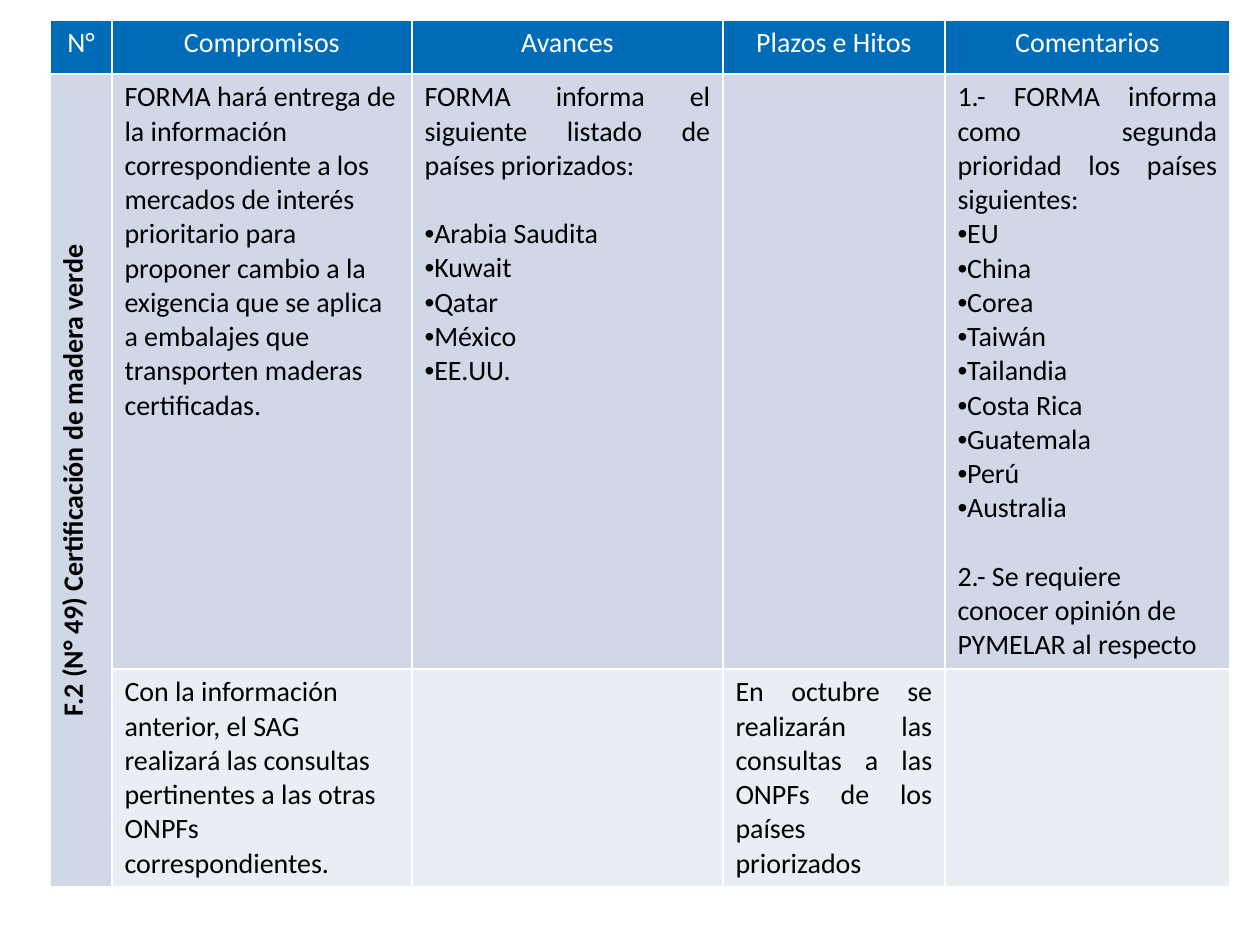
from lxml import etree
from pptx import Presentation
from pptx import util as u
from pptx.dml.color import RGBColor
from pptx.enum import text
from pptx.oxml import ns

WHITE = RGBColor(0xFF, 0xFF, 0xFF)
BLACK = RGBColor(0x00, 0x00, 0x00)
HEADER_BLUE = RGBColor(0x00, 0x6C, 0xB7)
BAND_DARK = RGBColor(0xD0, 0xD8, 0xE8)
BAND_LIGHT = RGBColor(0xE9, 0xED, 0xF4)

LEFT = text.PP_ALIGN.LEFT
CENTER = text.PP_ALIGN.CENTER
JUSTIFY = text.PP_ALIGN.JUSTIFY


def px(length):
    return u.Emu(round(length * 914400 / 126))


class SlideBuilder:
    font = "Calibri"
    size = u.Pt(16)
    line_gap = u.Pt(19.5)

    def __init__(self, slide):
        self.slide = slide

    def table(self, left, top, widths, heights, fills):
        frame = self.slide.shapes.add_table(
            len(heights), len(widths), px(left), px(top),
            px(sum(widths)), px(sum(heights)))
        grid = frame.table
        for column, width in zip(grid.columns, widths):
            column.width = px(width)
        for row, height, fill in zip(grid.rows, heights, fills):
            row.height = px(height)
            for cell in row.cells:
                cell.fill.solid()
                cell.fill.fore_color.rgb = fill
                # Keeps the empty cells at the same text size
                cell.text_frame.paragraphs[0].font.size = self.size
        return grid

    def paragraph(self, cell, words, align=LEFT, color=BLACK, bold=False,
                  gap=False):
        frame = cell.text_frame
        para = frame.add_paragraph() if frame.text else frame.paragraphs[0]
        para.text = words
        para.alignment = align
        if gap:
            para.space_before = self.line_gap
        font = para.runs[0].font
        font.name, font.size, font.bold = self.font, self.size, bold
        font.color.rgb = color
        return para

    def bullets(self, cell, items, gap=False):
        for index, item in enumerate(items):
            para = self.paragraph(cell, item, gap=gap and index == 0)
            props = para._p.get_or_add_pPr()
            props.set("marL", "0")
            props.set("indent", "0")
            etree.SubElement(props, ns.qn("a:buFont")).set("typeface", "Arial")
            etree.SubElement(props, ns.qn("a:buChar")).set("char", "•")

    def vertical(self, cell, words):
        self.paragraph(cell, words, CENTER, bold=True)
        cell._tc.get_or_add_tcPr().set("vert", "vert270")


def main():
    deck = Presentation()
    deck.slide_width, deck.slide_height = u.Inches(10), u.Inches(7.5)
    build = SlideBuilder(deck.slides.add_slide(deck.slide_layouts[6]))

    commitments = build.table(
        50, 20, widths=[62, 300, 311, 222, 285], heights=[54, 595, 217],
        fills=[HEADER_BLUE, BAND_DARK, BAND_LIGHT])

    # Header row
    headings = ["N°", "Compromisos", "Avances", "Plazos e Hitos", "Comentarios"]
    for column, heading in enumerate(headings):
        build.paragraph(commitments.cell(0, column), heading, CENTER, WHITE)

    # Topic, merged over both commitments
    topic = commitments.cell(1, 0)
    topic.merge(commitments.cell(2, 0))
    build.vertical(topic, "F.2 (N° 49) Certificación de madera verde")

    # First commitment
    build.paragraph(
        commitments.cell(1, 1),
        "FORMA hará entrega de la información correspondiente a los mercados "
        "de interés prioritario para proponer cambio a la exigencia que se "
        "aplica a embalajes que transporten maderas certificadas.")

    progress = commitments.cell(1, 2)
    build.paragraph(
        progress, "FORMA informa el siguiente listado de países priorizados:",
        JUSTIFY)
    build.bullets(
        progress, ["Arabia Saudita", "Kuwait", "Qatar", "México", "EE.UU."],
        gap=True)

    comments = commitments.cell(1, 4)
    build.paragraph(
        comments,
        "1.- FORMA informa como segunda prioridad los países siguientes:",
        JUSTIFY)
    build.bullets(
        comments, ["EU", "China", "Corea", "Taiwán", "Tailandia", "Costa Rica",
                   "Guatemala", "Perú", "Australia"])
    build.paragraph(
        comments, "2.- Se requiere conocer opinión de PYMELAR al respecto",
        gap=True)

    # Second commitment
    build.paragraph(
        commitments.cell(2, 1),
        "Con la información anterior, el SAG realizará las consultas "
        "pertinentes a las otras ONPFs correspondientes.")
    build.paragraph(
        commitments.cell(2, 3),
        "En octubre se realizarán las consultas a las ONPFs de los países "
        "priorizados", JUSTIFY)

    deck.save("out.pptx")


if __name__ == "__main__":
    main()
